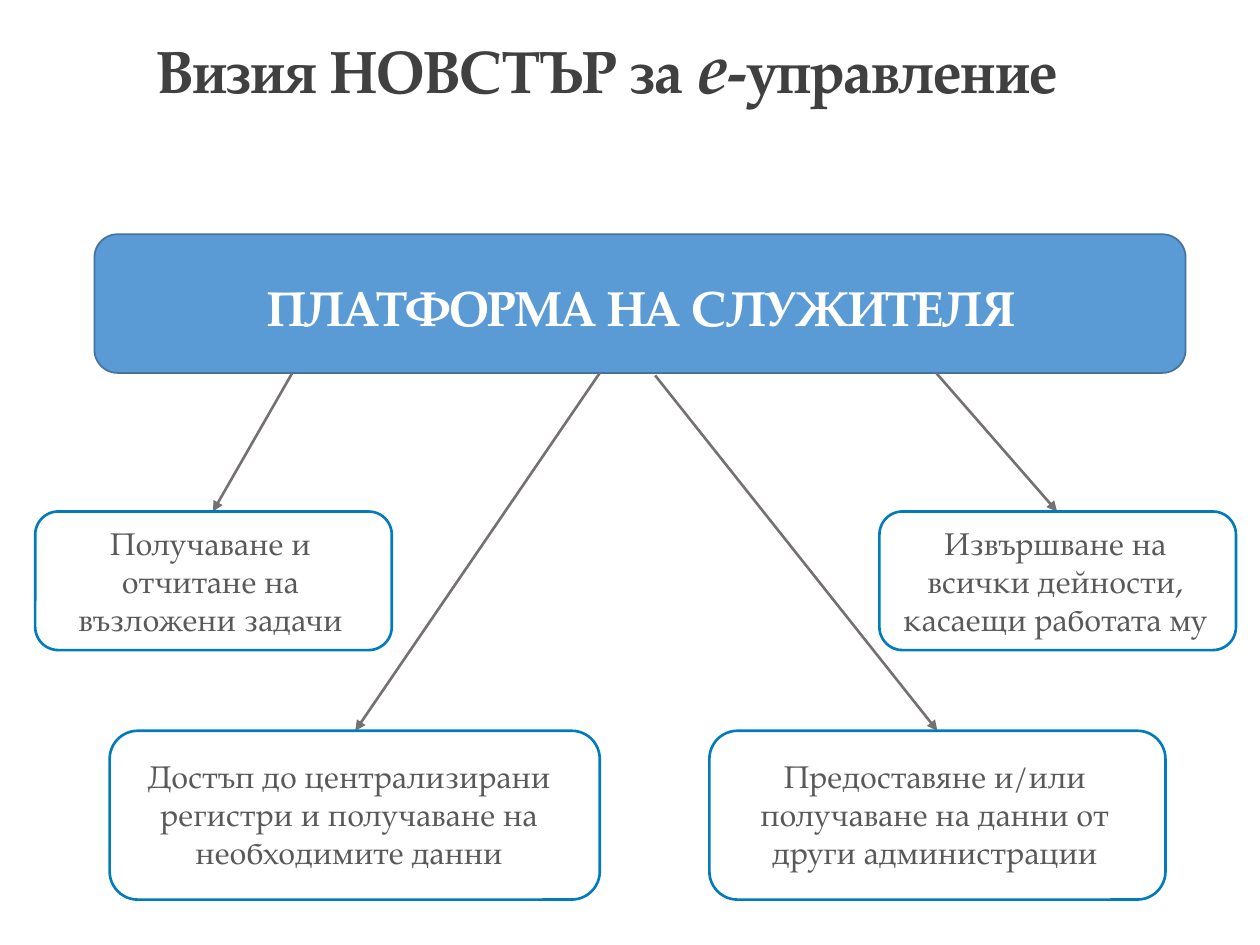
import pptx
import pptx.dml.color
import pptx.enum.shapes
import pptx.enum.text
import pptx.oxml
import pptx.oxml.ns
import pptx.util
from dataclasses import dataclass

Inches = pptx.util.Inches
Pt = pptx.util.Pt
RGB = pptx.dml.color.RGBColor.from_string
PP_ALIGN = pptx.enum.text.PP_ALIGN


@dataclass(frozen=True)
class Theme:
    font: str = "TeX Gyre Pagella"
    title: str = "404040"
    body: str = "595959"
    white: str = "FFFFFF"
    platform: str = "5B9BD5"
    platform_edge: str = "43739E"
    card_edge: str = "007CBE"
    arrow: str = "767171"
    title_size: int = 34
    accent_size: int = 40
    platform_size: int = 28
    body_size: int = 18


theme = Theme()
deck = pptx.Presentation()
deck.slide_width = Inches(10)
deck.slide_height = Inches(7.5)
slide = deck.slides.add_slide(deck.slide_layouts[6])


def add_panel(bounds, fill, edge, weight):
    panel = slide.shapes.add_shape(
        pptx.enum.shapes.MSO_SHAPE.ROUNDED_RECTANGLE, *map(Inches, bounds))
    panel.shadow.inherit = False
    panel.fill.solid()
    panel.fill.fore_color.rgb = RGB(fill)
    panel.line.color.rgb = RGB(edge)
    panel.line.width = Pt(weight)


def add_text(bounds, runs, color, bold, align):
    frame = slide.shapes.add_textbox(*map(Inches, bounds)).text_frame
    frame.word_wrap = True
    paragraph = frame.paragraphs[0]
    paragraph.alignment = align
    for wording, size, italic in runs:
        run = paragraph.add_run()
        run.text = wording
        run.font.name = theme.font
        run.font.size = Pt(size)
        run.font.bold = bold
        run.font.italic = italic
        run.font.color.rgb = RGB(color)
    return frame


title = add_text(
    (1.14, 0.04, 8.62, 1.04),
    [("Визия НОВСТЪР за ", theme.title_size, False),
     ("е", theme.accent_size, True),
     ("-управление", theme.title_size, False)],
    theme.title, True, PP_ALIGN.LEFT)
title.vertical_anchor = pptx.enum.text.MSO_ANCHOR.MIDDLE
title.paragraphs[0].line_spacing = 0.9

add_panel((0.75, 1.86, 8.66, 1.1), theme.platform, theme.platform_edge, 1)
add_text((0.91, 2.15, 8.35, 0.57),
         [("ПЛАТФОРМА НА СЛУЖИТЕЛЯ", theme.platform_size, False)],
         theme.white, True, PP_ALIGN.CENTER)

upper_top, lower_top = 4.06, 5.8
arrows = [
    (2.32, 2.96, 1.69, upper_top),
    (7.43, 2.96, 8.39, upper_top),
    (4.76, 2.96, 2.82, lower_top),
    (5.2, 2.98, 7.44, lower_top),
]
for ends in arrows:
    arrow = slide.shapes.add_connector(
        pptx.enum.shapes.MSO_CONNECTOR.STRAIGHT, *map(Inches, ends))
    arrow.line.color.rgb = RGB(theme.arrow)
    arrow.line.width = Pt(1.5)
    head = pptx.oxml.parse_xml(
        f'<a:tailEnd {pptx.oxml.ns.nsdecls("a")} type="triangle"/>')
    arrow.line._get_or_add_ln().append(head)
    no_shadow = pptx.oxml.parse_xml(f'<a:effectLst {pptx.oxml.ns.nsdecls("a")}/>')
    arrow._element.spPr.append(no_shadow)

functions = [
    ((0.28, upper_top, 2.83, 1.1), (0.38, 4.11, 2.58, 1.01),
     "Получаване и отчитане на възложени задачи"),
    ((0.87, lower_top, 3.89, 1.34), (0.96, 5.96, 3.62, 1.01),
     "Достъп до централизирани регистри и получаване на необходимите данни"),
    ((6.98, upper_top, 2.83, 1.1), (7.03, 4.11, 2.69, 1.01),
     "Извършване на всички дейности, касаещи работата му"),
    ((5.63, lower_top, 3.62, 1.34), (5.77, 5.96, 3.3, 1.17),
     "Предоставяне и/или получаване на данни от други администрации"),
]
for card_bounds, label_bounds, wording in functions:
    add_panel(card_bounds, theme.white, theme.card_edge, 1.5)
    add_text(label_bounds, [(wording, theme.body_size, False)],
             theme.body, False, PP_ALIGN.CENTER)

deck.save("out.pptx")
